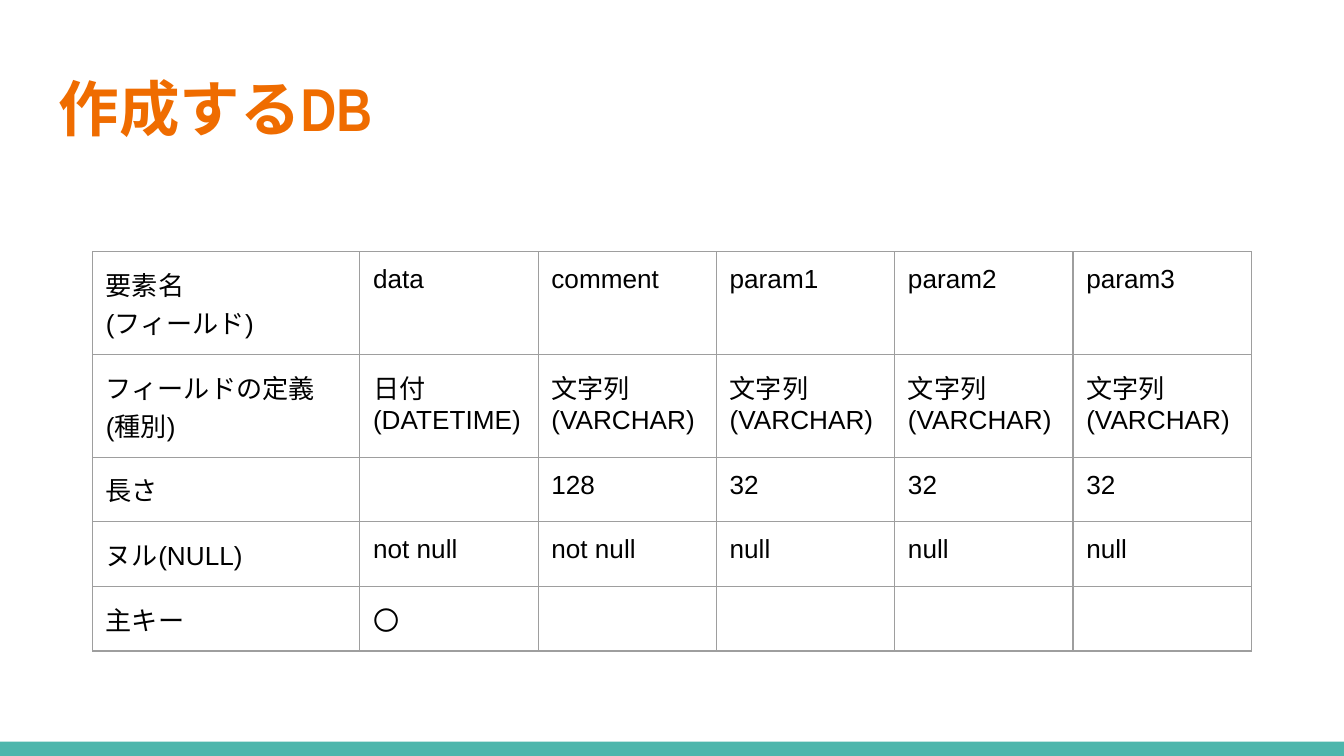
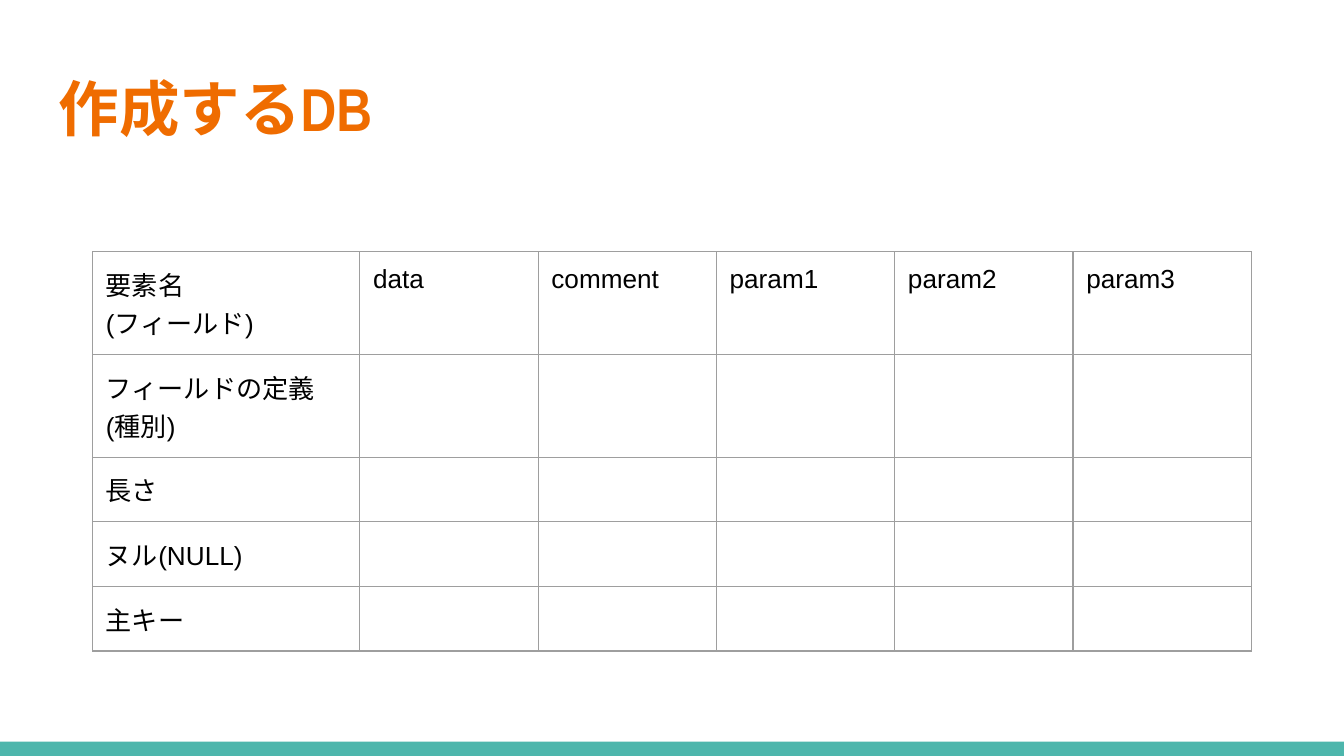
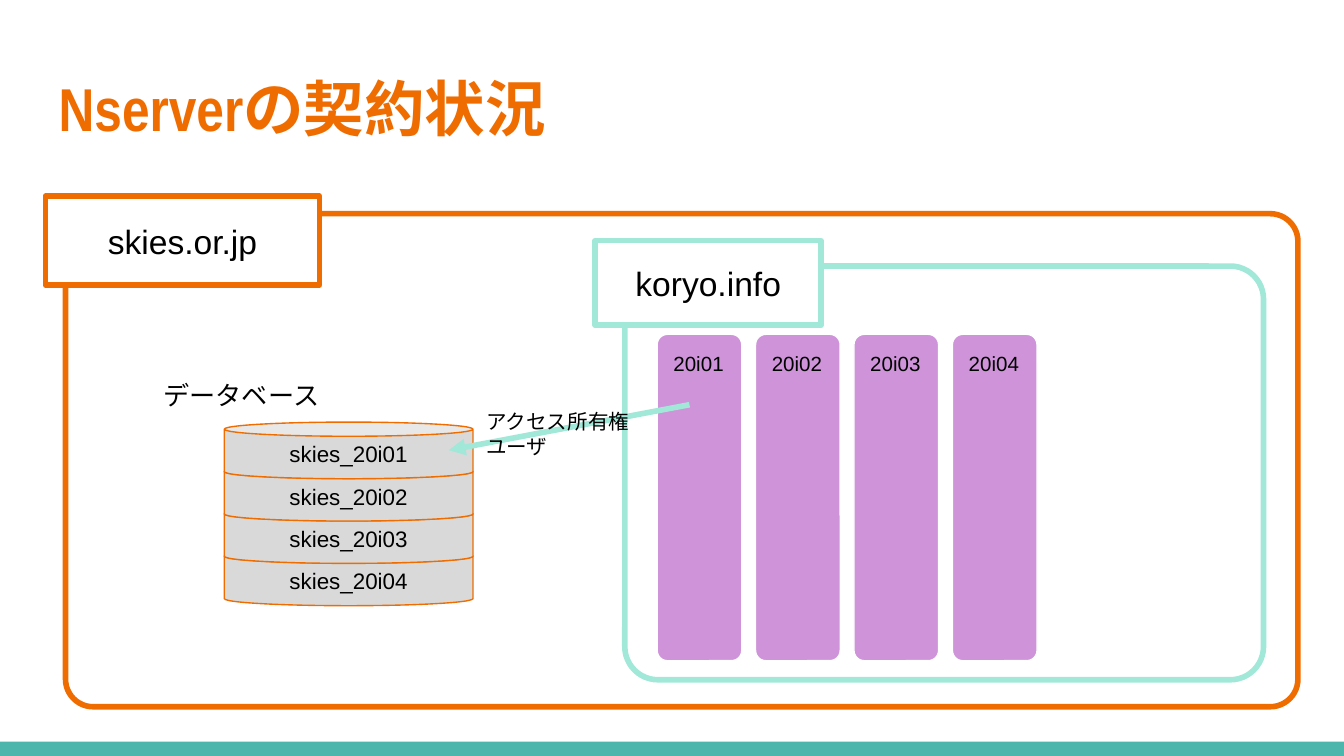
from lxml import etree
from pptx import Presentation
from pptx import util as u
from pptx.dml import color
from pptx.enum import shapes, text
from pptx.oxml import ns

COLORS = {
    "orange": "EF6C00", "teal": "4DB6AC", "mint": "A1E8D9", "purple": "CE93D8",
    "grey": "D9D9D9", "border": "9E9E9E", "white": "FFFFFF", "black": "000000",
}
KIND = shapes.MSO_SHAPE
CENTER = {"align": text.PP_ALIGN.CENTER, "anchor": text.MSO_ANCHOR.MIDDLE}


def rgb(name):
    return color.RGBColor.from_string(COLORS[name])


def add_xml(parent, tag, **attributes):
    return etree.SubElement(parent, ns.qn(tag), attributes)


class Deck:
    """Holds the shared style and the current page."""

    title_format = {"size": 32.4, "name": "Arial Narrow", "tint": "orange", "bold": True}
    inset = u.Cm(0.25)

    def __init__(self):
        self.deck = Presentation()
        self.deck.slide_width, self.deck.slide_height = u.Cm(25.4), u.Cm(14.29)
        self.page = None

    def new_page(self, title):
        self.page = self.deck.slides.add_slide(self.deck.slide_layouts[5])
        self.shape(KIND.RECTANGLE, (0, 14.02, 25.4, 0.27), fill="teal")
        box = self.page.shapes.title
        box.left, box.top, box.width, box.height = map(u.Cm, (0.86, 1.24, 23.67, 1.96))
        self.set_text(box.text_frame, title, spacing=0.9, **self.title_format)

    def set_text(self, frame, words, anchor=text.MSO_ANCHOR.TOP, **style):
        settings = {"word_wrap": True, "auto_size": text.MSO_AUTO_SIZE.NONE,
                    "vertical_anchor": anchor}
        settings.update({f"margin_{side}": self.inset
                         for side in ("left", "right", "top", "bottom")})
        for key, value in settings.items():
            setattr(frame, key, value)
        self.fill_lines(frame, words, **style)

    def fill_lines(self, frame, words, align=text.PP_ALIGN.LEFT, spacing=1.0, size=14,
                   name="Arial", tint="black", bold=False, east_asian=None):
        for index, line in enumerate(words.split("\n")):
            para = frame.add_paragraph() if index else frame.paragraphs[0]
            para.alignment, para.line_spacing = align, spacing
            if not line:
                # An empty paragraph keeps the font size of its neighbours
                add_xml(para._p, "a:endParaRPr", sz=str(int(size * 100)))
                continue
            span = para.add_run()
            span.text = line
            for key, value in {"size": u.Pt(size), "name": name, "bold": bold}.items():
                setattr(span.font, key, value)
            span.font.color.rgb = rgb(tint)
            if east_asian:
                add_xml(span.font._element, "a:ea", typeface=east_asian)

    def shape(self, kind, place, fill=None, line=None, weight=0.75, corner=None,
              words=None, **style):
        box = self.page.shapes.add_shape(kind, *map(u.Cm, place))
        box.shadow.inherit = False
        if corner is not None:
            box.adjustments[0] = corner
        for part, tint in ((box.fill, fill), (box.line.fill, line)):
            if tint:
                part.solid()
                part.fore_color.rgb = rgb(tint)
            else:
                part.background()
        if line:
            box.line.width = u.Pt(weight)
        if words:
            self.set_text(box.text_frame, words, **style)

    def label(self, place, words, size):
        box = self.page.shapes.add_textbox(*map(u.Cm, place))
        self.set_text(box.text_frame, words, size=size, name="Open Sans",
                      east_asian="Open Sans")

    def arrow(self, start, end, tint, weight):
        line = self.page.shapes.add_connector(
            shapes.MSO_CONNECTOR.STRAIGHT, *map(u.Cm, start + end))
        line.line.color.rgb = rgb(tint)
        line.line.width = u.Pt(weight)
        add_xml(line.line._get_or_add_ln(), "a:tailEnd", type="triangle")
        add_xml(line._element.spPr, "a:effectLst")

    def table(self, place, widths, heights, rows):
        frame = self.page.shapes.add_table(len(rows), len(widths), *map(u.Cm, place))
        grid = frame.table
        grid.first_row = grid.horz_banding = False
        for column, width in zip(grid.columns, widths):
            column.width = u.Cm(width)
        for row, height, entries in zip(grid.rows, heights, rows):
            row.height = u.Cm(height)
            for cell, words in zip(row.cells, entries):
                self.cell(cell, words)

    def cell(self, cell, words):
        properties = cell._tc.get_or_add_tcPr()
        for side in ("L", "R", "T", "B"):
            edge = add_xml(properties, f"a:ln{side}", w=str(int(u.Pt(0.75))))
            add_xml(add_xml(edge, "a:solidFill"), "a:srgbClr", val=COLORS["border"])
        cell.fill.background()
        for side in ("left", "right", "top", "bottom"):
            setattr(cell, f"margin_{side}", self.inset)
        self.fill_lines(cell.text_frame, words)


FIELDS = ["data", "comment", "param1", "param2", "param3"]
HEADS = ["要素名\n(フィールド)", "フィールドの定義\n(種別)", "長さ", "ヌル(NULL)", "主キー"]
BLANK = [""] * len(FIELDS)
DEFINITIONS = [
    ["日付\n(DATETIME)"] + ["文字列\n(VARCHAR)"] * 4,
    ["", "128"] + ["32"] * 3,
    ["not null"] * 2 + ["null"] * 3,
    ["〇"] + [""] * 4,
]


def field_page(style, values):
    style.new_page("作成するDB")
    rows = [[head] + entries for head, entries in zip(HEADS, [FIELDS] + values)]
    style.table((1.75, 4.76, 21.9, 6.68), [5.05] + [3.37] * 5,
                [1.7, 1.47] + [1.09] * 3, rows)


def server_page(style):
    style.new_page("Nserverの契約状況")

    # Domains: a rounded frame with a name plate each
    for frame, corner, plate, tint, name in (
        ((1.24, 4.04, 23.29, 9.32), 0.056, (0.86, 3.71, 5.18, 1.68), "orange", "skies.or.jp"),
        ((11.81, 5.03, 12.07, 7.82), 0.08, (11.25, 4.55, 4.27, 1.6), "mint", "koryo.info"),
    ):
        style.shape(KIND.ROUNDED_RECTANGLE, frame, line=tint, weight=3, corner=corner)
        style.shape(KIND.RECTANGLE, plate, fill="white", line=tint, weight=3,
                    words=name, size=18, **CENTER)

    # User columns
    users = ["20i01", "20i02", "20i03", "20i04"]
    for index, user in enumerate(users):
        style.shape(KIND.ROUNDED_RECTANGLE, (12.42 + 1.86 * index, 6.32, 1.6, 6.17),
                    fill="purple", line="white", corner=0.122, words=user, size=11)

    # Database stack, lowest first so that each drum covers the one below
    for index, user in reversed(list(enumerate(users))):
        style.shape(KIND.CAN, (4.24, 7.98 + 0.8 * index, 4.7, 1.07), fill="grey",
                    line="orange", corner=0.25, words=f"skies_{user}", size=12, **CENTER)
    style.label((2.84, 6.93, 3.51, 1.12), "データベース", 14)

    # Access from the user to the database
    style.arrow((13.03, 7.65), (8.48, 8.51), "mint", 3)
    style.label((8.94, 7.49, 3.51, 1.45), "アクセス所有権\nユーザ", 11)


def main():
    style = Deck()
    field_page(style, DEFINITIONS)
    field_page(style, [BLANK] * 4)
    server_page(style)
    style.deck.save("out.pptx")


if __name__ == "__main__":
    main()
